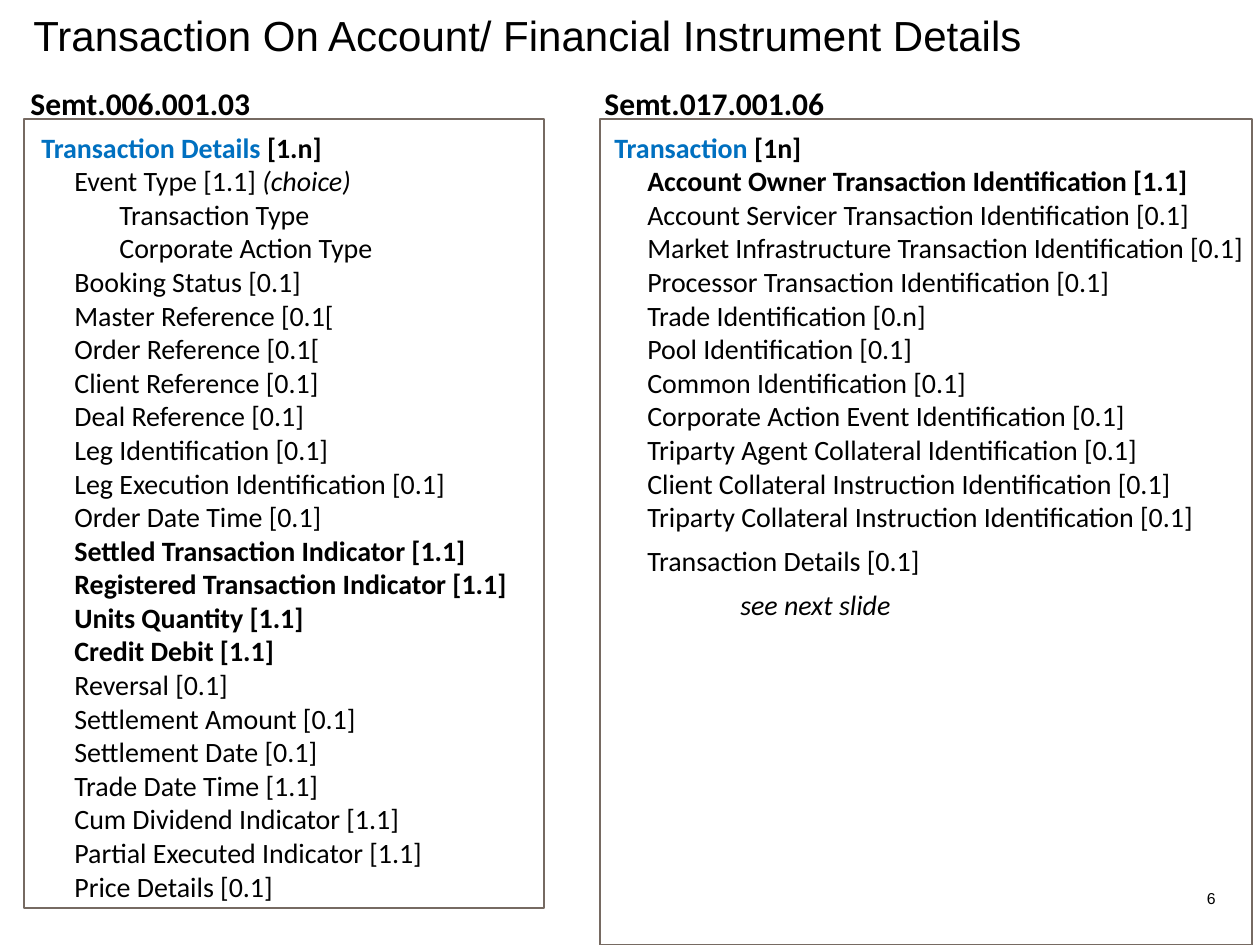
from dataclasses import dataclass

from pptx import Presentation
from pptx.dml.color import RGBColor as RGB
from pptx.enum.shapes import MSO_SHAPE as SHAPE
from pptx.enum.text import MSO_ANCHOR as ANCHOR, PP_ALIGN as ALIGN
from pptx.util import Pt

PX = 914400 // 126  # EMU per px


@dataclass(frozen=True)
class Theme:
    text: RGB = RGB(0, 0, 0)
    accent: RGB = RGB(0x00, 0x70, 0xC0)
    paper: RGB = RGB(0xFF, 0xFF, 0xFF)
    border: RGB = RGB(0x76, 0x6A, 0x62)
    heading_font: str = "Arial"
    body_font: str = "Calibri"
    title_size: int = 24
    label_size: int = 18
    body_size: int = 16
    footer_size: int = 9


class Deck:
    INDENTS = (0, 33, 78, 126)  # px per outline level

    def __init__(self, theme):
        self.theme = theme
        self.prs = Presentation()
        self.prs.slide_width, self.prs.slide_height = 1260 * PX, 945 * PX
        self.slide = self.prs.slides.add_slide(self.prs.slide_layouts[6])

    def panel(self, *box):
        sp = self.slide.shapes.add_shape(SHAPE.RECTANGLE, *(v * PX for v in box))
        sp.shadow.inherit = False
        sp.fill.solid()
        sp.fill.fore_color.rgb = self.theme.paper
        sp.line.color.rgb = self.theme.border
        sp.line.width = Pt(0.75)

    def frame(self, box, anchor=ANCHOR.TOP):
        tf = self.slide.shapes.add_textbox(*(v * PX for v in box)).text_frame
        tf.word_wrap = True
        tf.vertical_anchor = anchor
        return tf

    def style(self, p, font, size, bold=None):
        p.font.name, p.font.size, p.font.bold = font, Pt(size), bold
        p.font.color.rgb = self.theme.text

    def label(self, text, box, font, size, bold=None, align=ALIGN.LEFT, anchor=ANCHOR.TOP):
        p = self.frame(box, anchor).paragraphs[0]
        p.text, p.alignment = text, align
        self.style(p, font, size, bold)

    def outline(self, items, box):
        """Each item is (level, look, text, tail look, tail text, space before)."""
        tf = self.frame(box)
        for i, item in enumerate(items):
            p = tf.add_paragraph() if i else tf.paragraphs[0]
            p._p.get_or_add_pPr().set("marL", str(self.INDENTS[item.level] * PX))
            if item.before:
                p.space_before = Pt(item.before)
            self.style(p, self.theme.body_font, self.theme.body_size)
            for text, look in item.runs:
                r = p.add_run()
                r.text = text
                if "b" in look:
                    r.font.bold = True
                if "i" in look:
                    r.font.italic = True
                if "a" in look:
                    r.font.color.rgb = self.theme.accent


@dataclass(frozen=True)
class Item:
    """One outline line; looks are b (bold), i (italic), a (accent)."""
    level: int
    runs: tuple
    before: int = 0


def line(text, look="", level=1, before=0):
    return Item(level, ((text, look),), before)


def heading(name, count):
    return Item(0, ((name + " ", "ba"), (count, "b")))


def lines(look, *texts):
    return [line(text, look) for text in texts]


STATEMENT = [
    heading("Transaction Details", "[1.n]"),
    Item(1, (("Event Type [1.1] ", ""), ("(choice)", "i"))),
    line("Transaction Type", level=2),
    line("Corporate Action Type", level=2),
    *lines("", "Booking Status [0.1]", "Master Reference [0.1[",
           "Order Reference [0.1[", "Client Reference [0.1]",
           "Deal Reference [0.1]", "Leg Identification [0.1]",
           "Leg Execution Identification [0.1]", "Order Date Time [0.1]"),
    *lines("b", "Settled Transaction Indicator [1.1]",
           "Registered Transaction Indicator [1.1]",
           "Units Quantity [1.1]", "Credit Debit [1.1]"),
    *lines("", "Reversal [0.1]", "Settlement Amount [0.1]",
           "Settlement Date [0.1]", "Trade Date Time [1.1]",
           "Cum Dividend Indicator [1.1]", "Partial Executed Indicator [1.1]",
           "Price Details [0.1]"),
]

POSTING = [
    heading("Transaction", "[1n]"),
    line("Account Owner Transaction Identification [1.1]", "b"),
    *lines("", "Account Servicer Transaction Identification [0.1]",
           "Market Infrastructure Transaction Identification [0.1]",
           "Processor Transaction Identification [0.1]",
           "Trade Identification [0.n]", "Pool Identification [0.1]",
           "Common Identification [0.1]",
           "Corporate Action Event Identification [0.1]",
           "Triparty Agent Collateral Identification [0.1]",
           "Client Collateral Instruction Identification [0.1]",
           "Triparty Collateral Instruction Identification [0.1]"),
    line("Transaction Details [0.1]", before=6),
    line("see next slide", "i", level=3, before=6),
]


def main():
    t = Theme()
    deck = Deck(t)

    # Title
    deck.label("Transaction On Account/ Financial Instrument Details",
               (21, 0, 1226, 70), t.heading_font, t.title_size, anchor=ANCHOR.MIDDLE)

    # Message columns: name, name left, panel, outline, outline box
    columns = (
        ("Semt.006.001.03", 18, (24, 119, 520, 789), STATEMENT, (29, 124, 496, 792)),
        ("Semt.017.001.06", 592, (600, 119, 652, 826), POSTING, (602, 124, 658, 509)),
    )
    for name, left, panel, items, box in columns:
        deck.panel(*panel)
        deck.label(name, (left, 78, 260, 50), t.body_font, t.label_size, bold=True)
        deck.outline(items, box)

    # Slide number
    deck.label("6", (1124, 882, 104, 32), t.heading_font, t.footer_size,
               align=ALIGN.RIGHT, anchor=ANCHOR.MIDDLE)

    deck.prs.save("out.pptx")


if __name__ == "__main__":
    main()
